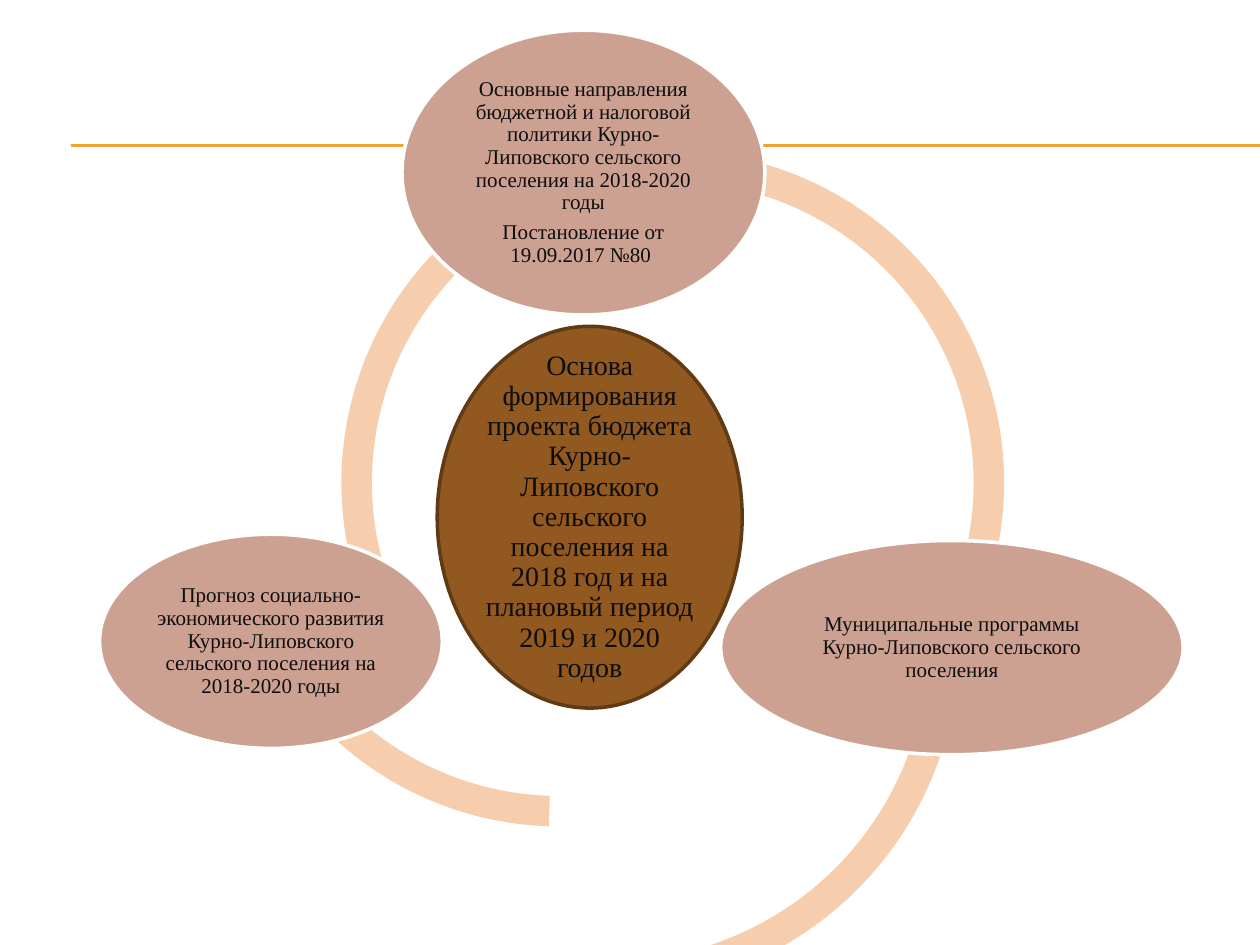
"""Build a slide of budget sources set around a ring."""
from dataclasses import dataclass

from pptx import Presentation
from pptx.dml.color import RGBColor
from pptx.enum import shapes as kinds, text as txt
from pptx.oxml.ns import qn
from pptx.util import Inches, Pt
from lxml import etree


@dataclass
class Arc:
    left: float
    top: float
    size: float
    start: float
    end: float
    band: float


@dataclass
class Oval:
    left: float
    top: float
    width: float
    height: float
    paras: tuple[str, ...]
    fill: str = "CCA192"
    line: str = "FFFFFF"
    points: int = 12


ARCS = [
    Arc(1.81, 1.3, 5.26, 91.82, 164.5, 0.046),
    Arc(2.09, 2.35, 5.52, 0.29, 108.29, 0.044),
    Arc(2.71, 1.2, 5.26, 152.29, 18.32, 0.046),
]
OVALS = [
    Oval(3.47, 2.59, 2.42, 3.03, (
        "Основа формирования проекта бюджета Курно-Липовского сельского "
        "поселения на 2018 год и на плановый период 2019 и 2020 годов",
    ), "91581F", "603A14", 16),
    Oval(3.19, 0.24, 2.88, 2.26, (
        "Основные направления бюджетной и налоговой политики "
        "Курно-Липовского сельского поселения на 2018-2020 годы",
        "Постановление от 19.09.2017 №80 ",
    )),
    Oval(5.72, 4.29, 3.67, 1.7, (
        "Муниципальные программы Курно-Липовского сельского поселения",
    )),
    Oval(0.79, 4.24, 2.72, 1.7, (
        "Прогноз социально-экономического развития Курно-Липовского "
        "сельского поселения на 2018-2020 годы",
    )),
]


def paint(fmt, color: str) -> None:
    fmt.solid()
    fmt.fore_color.rgb = RGBColor.from_string(color)


def add_rule(slide, y: float) -> None:
    rule = slide.shapes.add_connector(
        kinds.MSO_CONNECTOR.STRAIGHT, Inches(0.56), Inches(y), Inches(10), Inches(y))
    paint(rule.line.fill, "F0A22E")
    rule.line.width = Pt(0.75)
    etree.SubElement(rule._element.spPr, qn("a:effectLst"))


def add_arc(slide, arc: Arc) -> None:
    shape = slide.shapes.add_shape(
        kinds.MSO_SHAPE.BLOCK_ARC, Inches(arc.left), Inches(arc.top),
        Inches(arc.size), Inches(arc.size))
    shape.shadow.inherit = False
    shape.adjustments[0] = arc.start * 0.6
    shape.adjustments[1] = arc.end * 0.6
    shape.adjustments[2] = arc.band
    paint(shape.fill, "F6CEAD")
    shape.line.fill.background()


def add_oval(slide, oval: Oval) -> None:
    shape = slide.shapes.add_shape(
        kinds.MSO_SHAPE.OVAL, Inches(oval.left), Inches(oval.top),
        Inches(oval.width), Inches(oval.height))
    shape.shadow.inherit = False
    paint(shape.fill, oval.fill)
    paint(shape.line.fill, oval.line)
    shape.line.width = Pt(2)
    frame = shape.text_frame
    frame.word_wrap = True
    frame.vertical_anchor = txt.MSO_ANCHOR.MIDDLE
    frame.margin_left = frame.margin_right = Inches(0.02)
    frame.margin_top = frame.margin_bottom = Inches(0.02)
    for i, words in enumerate(oval.paras):
        para = frame.add_paragraph() if i else frame.paragraphs[0]
        para.alignment = txt.PP_ALIGN.CENTER
        para.line_spacing = 0.9
        para.space_after = Pt(oval.points * 0.35)
        run = para.add_run()
        run.text = words
        run.font.name = "Times New Roman"
        run.font.size = Pt(oval.points)
        paint(run.font.fill, "0D0D0D")


def main() -> None:
    deck = Presentation()
    deck.slide_width, deck.slide_height = Inches(10), Inches(7.5)
    slide = deck.slides.add_slide(deck.slide_layouts[6])
    for y in (1.15, 1.16):
        add_rule(slide, y)
    for arc in ARCS:
        add_arc(slide, arc)
    for oval in OVALS:
        add_oval(slide, oval)
    deck.save("out.pptx")


if __name__ == "__main__":
    main()
